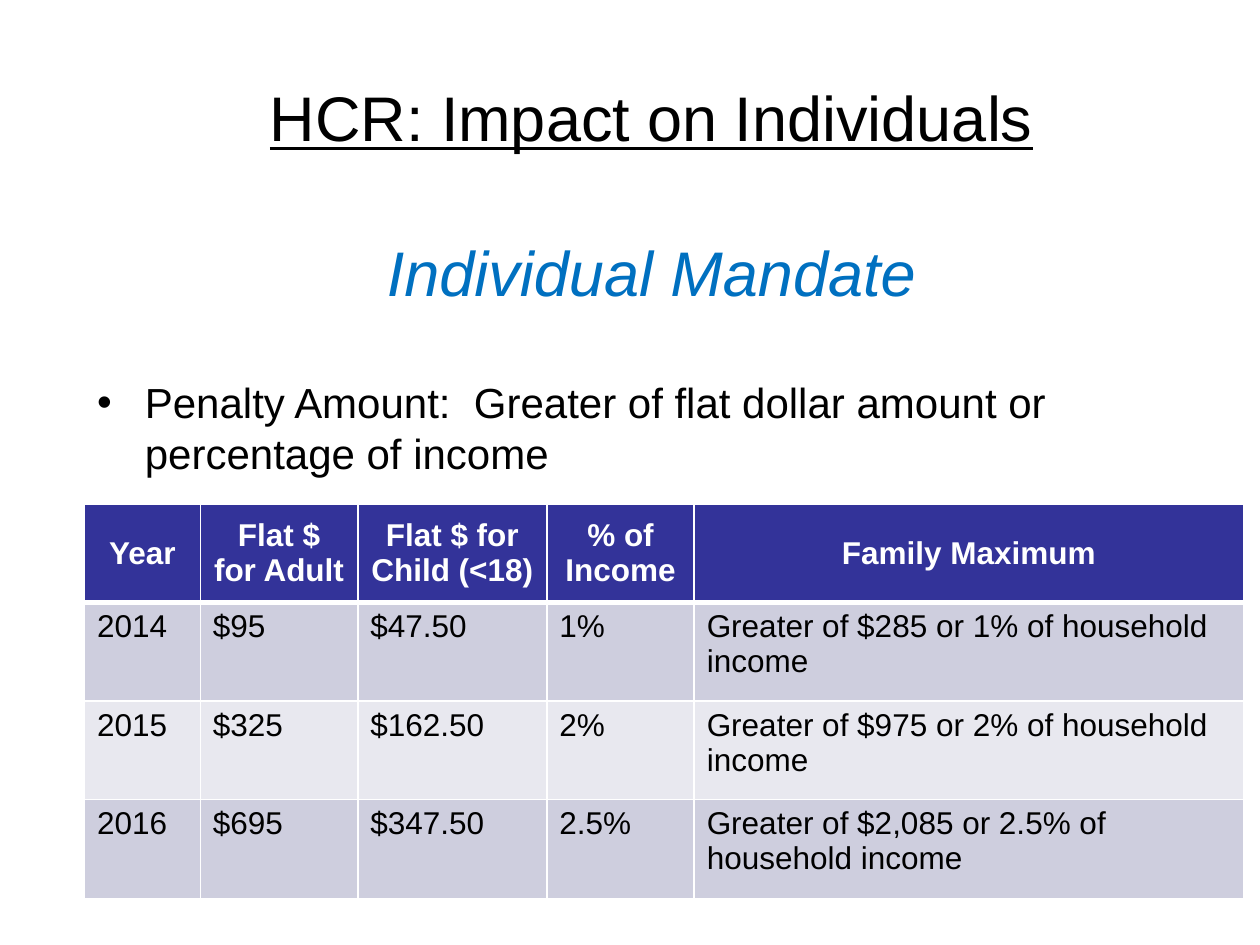
import pptx
import pptx.dml.color
import pptx.enum.text
import pptx.oxml
import pptx.oxml.ns
import pptx.util

Inches, Pt = pptx.util.Inches, pptx.util.Pt
RGB = pptx.dml.color.RGBColor.from_string
PP_ALIGN = pptx.enum.text.PP_ALIGN
ANCHOR = pptx.enum.text.MSO_ANCHOR

THEME = {
    "font": "Arial",
    "heading": Pt(36), "body": Pt(24), "cell": Pt(18),
    "text": "000000", "accent": "0070C0", "line": "FFFFFF",
    "header_fill": "333399", "header_text": "FFFFFF",
    "bands": ["CECEDE", "E8E8EF"],
}


def write(p, text, color, align=PP_ALIGN.LEFT, **font):
    """Fill a paragraph with one run in the theme font."""
    p.alignment = align
    r = p.add_run()
    r.text = text
    for name, value in {"name": THEME["font"], **font}.items():
        setattr(r.font, name, value)
    r.font.color.rgb = RGB(color)


def add_borders(cell, bottom):
    """Draw the cell's edges, 1 pt wide except the bottom one."""
    tc_pr = cell._tc.get_or_add_tcPr()
    for i, (side, width) in enumerate([("L", 1), ("R", 1), ("T", 1), ("B", bottom)]):
        tc_pr.insert(i, pptx.oxml.parse_xml(
            f'<a:ln{side} {pptx.oxml.ns.nsdecls("a")} w="{Pt(width)}"><a:solidFill>'
            f'<a:srgbClr val="{THEME["line"]}"/></a:solidFill></a:ln{side}>'))


prs = pptx.Presentation()
prs.slide_width, prs.slide_height = Inches(10), Inches(7.5)
s = prs.slides.add_slide(prs.slide_layouts[1])

# Title and body
title, body = s.shapes.title, s.placeholders[1]
for sp, top, height, anchor in [(title, 0.3, 1.25, ANCHOR.MIDDLE),
                                (body, 1.75, 5.5, ANCHOR.TOP)]:
    sp.left, sp.top = Inches(0.67), Inches(top)
    sp.width, sp.height = Inches(9), Inches(height)
    sp.text_frame.vertical_anchor = anchor
    sp.text_frame.auto_size = pptx.enum.text.MSO_AUTO_SIZE.NONE

write(title.text_frame.paragraphs[0], "HCR: Impact on Individuals", THEME["text"],
      PP_ALIGN.CENTER, size=THEME["heading"], underline=True)

tf = body.text_frame
tf.margin_top = Inches(0.1)
p = tf.paragraphs[0]
p.space_before = Pt(0)
p_pr = p._p.get_or_add_pPr()
p_pr.set("marL", "0")
p_pr.set("indent", "0")
p_pr.append(pptx.oxml.parse_xml(f'<a:buNone {pptx.oxml.ns.nsdecls("a")}/>'))
write(p, "Individual Mandate", THEME["accent"], PP_ALIGN.CENTER,
      size=THEME["heading"], italic=True)

p = tf.add_paragraph()
p.space_before = Pt(39)
p_pr = p._p.get_or_add_pPr()
p_pr.set("marL", str(Inches(0.38)))
p_pr.set("indent", str(-Inches(0.38)))
p_pr.append(pptx.oxml.parse_xml(f'<a:buChar {pptx.oxml.ns.nsdecls("a")} char="•"/>'))
write(p, "Penalty Amount:  Greater of flat dollar amount or percentage of income",
      THEME["text"], size=THEME["body"])

# Penalty table
rows = [
    ["Year", "Flat $ for Adult", "Flat $ for Child (<18)", "% of Income", "Family Maximum"],
    ["2014", "$95", "$47.50", "1%", "Greater of $285 or 1% of household income"],
    ["2015", "$325", "$162.50", "2%", "Greater of $975 or 2% of household income"],
    ["2016", "$695", "$347.50", "2.5%", "Greater of $2,085 or 2.5% of household income"],
]
widths = [0.92, 1.25, 1.5, 1.17, 4.36]
table = s.shapes.add_table(len(rows), len(widths), Inches(0.67), Inches(4),
                           Inches(sum(widths)), Inches(3.13)).table
for column, width in zip(table.columns, widths):
    column.width = Inches(width)

for i, row in enumerate(rows):
    header = i == 0
    for j, text in enumerate(row):
        cell = table.cell(i, j)
        cell.fill.solid()
        cell.fill.fore_color.rgb = RGB(
            THEME["header_fill"] if header else THEME["bands"][(i - 1) % 2])
        cell.vertical_anchor = ANCHOR.MIDDLE if header else ANCHOR.TOP
        add_borders(cell, bottom=3 if header else 1)
        write(cell.text_frame.paragraphs[0], text,
              THEME["header_text"] if header else THEME["text"],
              PP_ALIGN.CENTER if header else PP_ALIGN.LEFT,
              size=THEME["cell"], bold=header)

prs.save("out.pptx")
